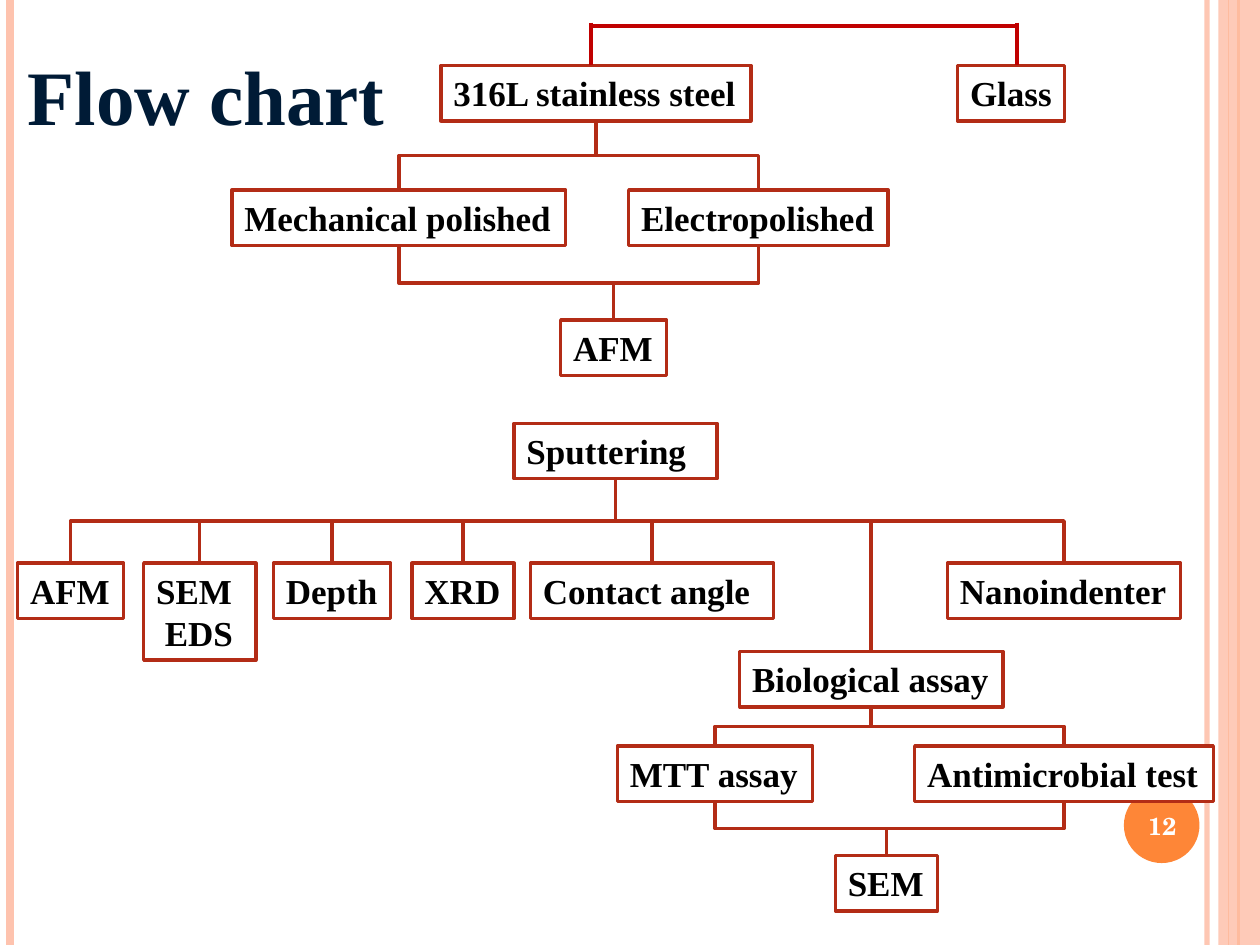
"""Build a flow chart slide of sample preparation, sputtering and testing."""
from lxml.etree import SubElement
from pptx import Presentation
from pptx.dml.color import RGBColor
from pptx.enum.shapes import MSO_CONNECTOR, MSO_SHAPE
from pptx.enum.text import MSO_ANCHOR, MSO_AUTO_SIZE, PP_ALIGN
from pptx.oxml.ns import qn
from pptx.util import Inches, Pt

WIDTH, HEIGHT = 10, 7.5
COLORS = {"box": "FFFFFF", "border": "B32C16", "bracket": "C00000", "text": "000000",
          "title": "001B36", "pink": "FEC3AE", "orange": "FE8637", "number": "FFFFFF"}
SERIF, SCHOOL = "Times New Roman", "TeX Gyre Schola"
ROW, TALL_ROW = 0.44, 0.77

STRIPES = [(9.58, "pink", 3, 93), (0.08, "pink", 4.5, 100),
           (9.83, "orange", 1.5, 100), (9.75, "orange", 0.75, 100)]
LEVELS = [
    (0.52, [("steel", "316L stainless steel", 3.5, 2.46), ("glass", "Glass", 7.6, 0.85)]),
    (1.51, [("mechanical", "Mechanical polished", 1.84, 2.65),
            ("electro", "Electropolished", 4.99, 2.06)]),
    (2.54, [("surface", "AFM", 4.45, 0.84)]),
    (3.36, [("sputtering", "Sputtering", 4.08, 1.61)]),
    (4.47, [("afm", "AFM", 0.14, 0.84), ("sem", "SEM\n EDS", 1.14, 0.89),
            ("depth", "Depth", 2.17, 0.93), ("xrd", "XRD", 3.27, 0.81),
            ("angle", "Contact angle", 4.21, 1.93), ("nano", "Nanoindenter", 7.52, 1.85)]),
    (5.17, [("biological", "Biological assay", 5.87, 2.09)]),
    (5.92, [("mtt", "MTT assay", 4.9, 1.55), ("antimicrobial", "Antimicrobial test", 7.26, 2.37)]),
    (6.79, [("final", "SEM", 6.63, 0.81)]),
]
LINKS = [
    (["steel"], ["mechanical", "electro"]),
    (["mechanical", "electro"], ["surface"]),
    (["sputtering"], ["afm", "sem", "depth", "xrd", "angle", "nano", "biological"]),
    (["biological"], ["mtt", "antimicrobial"]),
    (["mtt", "antimicrobial"], ["final"]),
]
BRACKET_TOP, BRACKET_ENDS = 0.21, (4.69, 8.07)


def color(name):
    return RGBColor.from_string(COLORS[name])


def set_opacity(shape, percent):
    for fill in shape.element.spPr.iter(qn("a:srgbClr")):
        SubElement(fill, qn("a:alpha")).set("val", str(percent * 1000))


def write(shape, text, size=20, font=SERIF, ink="text", align=PP_ALIGN.LEFT,
          anchor=MSO_ANCHOR.TOP, right_inset=0.0):
    frame = shape.text_frame
    frame.word_wrap, frame.auto_size = True, MSO_AUTO_SIZE.NONE
    frame.vertical_anchor, frame.margin_right = anchor, Inches(right_inset)
    frame.text = text
    for para in frame.paragraphs:
        para.alignment = align
        for span in para.runs:
            span.font.name, span.font.size, span.font.bold = font, Pt(size), True
            span.font.color.rgb = color(ink)


def add_block(page, kind, area, fill, border=None):
    block = page.shapes.add_shape(kind, *map(Inches, area))
    block.shadow.inherit = False
    block.fill.solid()
    block.fill.fore_color.rgb = color(fill)
    if border:
        block.line.color.rgb, block.line.width = color(border), Pt(2)
    else:
        block.line.fill.background()
    return block


def add_line(page, start, end, ink, weight, kind=MSO_CONNECTOR.STRAIGHT):
    line = page.shapes.add_connector(kind, *map(Inches, (*start, *end)))
    line.line.color.rgb, line.line.width = color(ink), Pt(weight)
    SubElement(line.element.spPr, qn("a:effectLst"))
    return line


def link(page, upper, lower, bus):
    """Join bottom centre to top centre with an elbow that turns at the bus height."""
    start_x, start_y = upper.left + upper.width // 2, upper.top + upper.height
    end_x, end_y = lower.left + lower.width // 2, lower.top
    drop, reach = end_y - start_y, abs(end_x - start_x)
    elbow = add_line(page, (0, 0), (1, 1), "border", 2, MSO_CONNECTOR.ELBOW)
    elbow.left = (start_x + end_x - drop) // 2
    elbow.top = (start_y + end_y - reach) // 2
    elbow.width, elbow.height = drop, reach
    frame = elbow.element.spPr.find(qn("a:xfrm"))
    rightward = end_x > start_x
    frame.set("rot", str((270 if rightward else 90) * 60000))
    frame.set("flipH", str(int(rightward)))
    guides = elbow.element.spPr.find(qn("a:prstGeom")).get_or_add_avLst()
    guide = SubElement(guides, qn("a:gd"))
    guide.set("name", "adj1")
    guide.set("fmla", f"val {round((bus - start_y) / drop * 100000)}")


def main():
    deck = Presentation()
    deck.slide_width, deck.slide_height = Inches(WIDTH), Inches(HEIGHT)
    page = deck.slides.add_slide(deck.slide_layouts[5])

    for x, ink, weight, opacity in STRIPES:
        stripe = add_line(page, (x, 0), (x, HEIGHT), ink, weight)
        if opacity < 100:
            set_opacity(stripe, opacity)
    band = add_block(page, MSO_SHAPE.RECTANGLE, (9.67, 0, 0.33, HEIGHT), "pink")
    set_opacity(band, 87)
    add_block(page, MSO_SHAPE.OVAL, (8.92, 6.25, 0.6, 0.6), "orange")

    boxes = {}
    for top, items in LEVELS:
        for key, text, left, width in items:
            height = TALL_ROW if "\n" in text else ROW
            boxes[key] = add_block(page, MSO_SHAPE.RECTANGLE, (left, top, width, height),
                                   "box", "border")
            write(boxes[key], text)

    for parents, children in LINKS:
        first, nearest = boxes[parents[0]], boxes[children[0]]
        bus = (first.top + first.height + nearest.top) // 2
        for parent in parents:
            for child in children:
                link(page, boxes[parent], boxes[child], bus)

    left_end, right_end = BRACKET_ENDS
    add_line(page, (left_end, BRACKET_TOP), (right_end, BRACKET_TOP), "bracket", 2.25)
    for x in BRACKET_ENDS:
        add_line(page, (x, 0.18), (x, LEVELS[0][0]), "bracket", 2.25)

    title = page.shapes.title
    title.left, title.top, title.width, title.height = map(Inches, (0.12, 0.13, 3.08, 1.24))
    write(title, "Flow chart", size=44, ink="title", anchor=MSO_ANCHOR.MIDDLE)
    number = page.shapes.add_textbox(*map(Inches, (8.89, 6.27, 0.67, 0.57)))
    write(number, "12", size=14, font=SCHOOL, ink="number", align=PP_ALIGN.CENTER,
          anchor=MSO_ANCHOR.MIDDLE, right_inset=0.1)
    deck.save("out.pptx")


if __name__ == "__main__":
    main()
